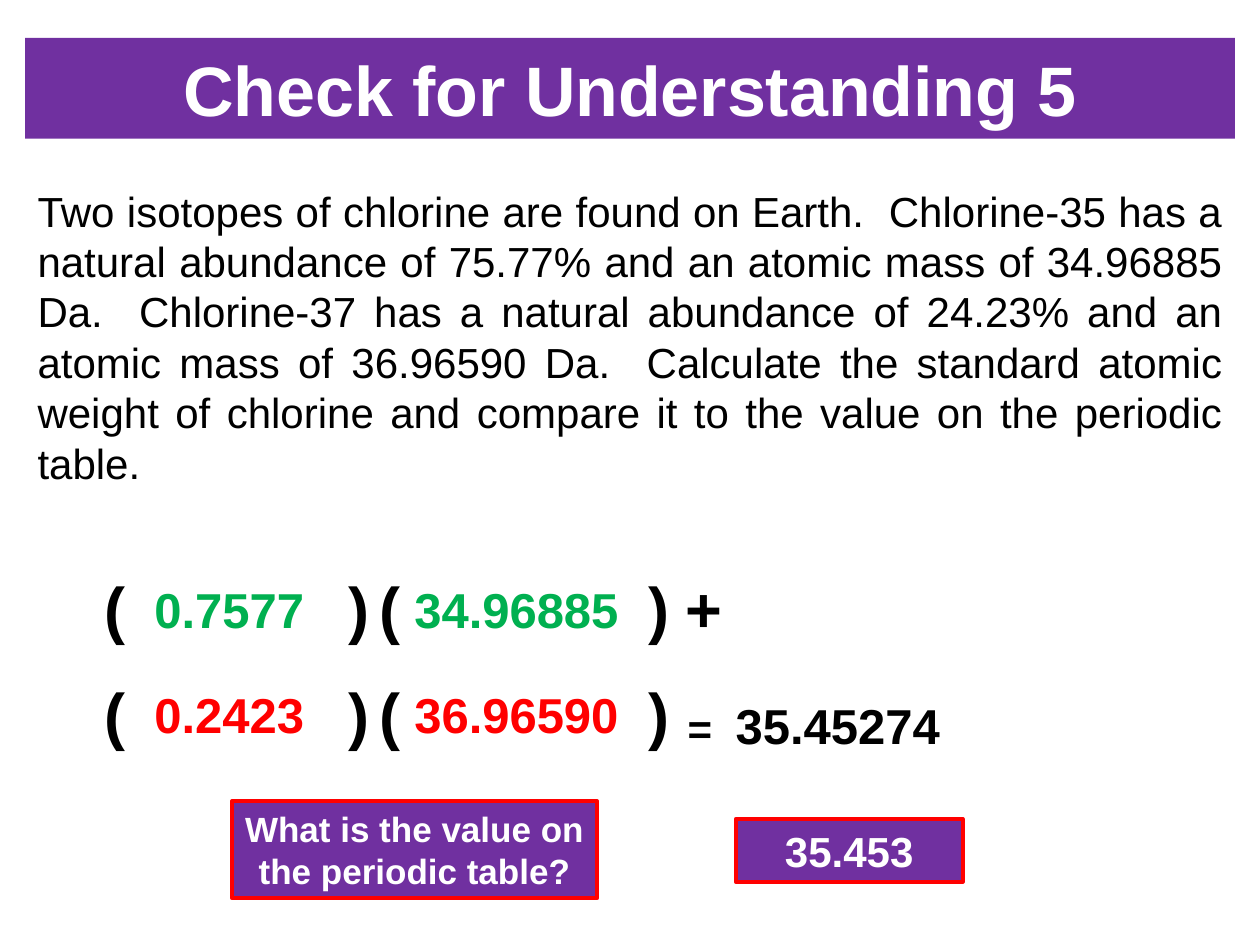
"""Build a slide that checks the standard atomic weight of chlorine."""
from pptx import Presentation
from pptx.dml.color import RGBColor
from pptx.enum.shapes import MSO_SHAPE
from pptx.enum.text import MSO_ANCHOR, PP_ALIGN
from pptx.oxml.ns import qn
from pptx.util import Inches, Pt

PURPLE = RGBColor(0x70, 0x30, 0xA0)
RED = RGBColor(0xFF, 0x00, 0x00)
GREEN = RGBColor(0x00, 0xB0, 0x50)
BLACK = RGBColor(0x00, 0x00, 0x00)
WHITE = RGBColor(0xFF, 0xFF, 0xFF)
NO_STYLE_NO_GRID = "{2D5ABB26-0587-4C30-8999-92F81FD0307C}"

prs = Presentation()
prs.slide_width, prs.slide_height = Inches(10), Inches(7.5)
U = prs.slide_width // 100
s = prs.slides.add_slide(prs.slide_layouts[5])


def grid(*units):
    return [int(n * U) for n in units]


def style(p, size, color, align=PP_ALIGN.CENTER, bold=True):
    p.alignment = align
    p.font.name = "Arial"
    p.font.size = Pt(size)
    p.font.bold = bold
    p.font.color.rgb = color


sp = s.shapes.title
sp.left, sp.top, sp.width, sp.height = grid(2, 3, 96, 8)
sp.fill.solid()
sp.fill.fore_color.rgb = PURPLE
tf = sp.text_frame
tf.text = "Check for Understanding 5"
tf.vertical_anchor = MSO_ANCHOR.MIDDLE
style(tf.paragraphs[0], 40, WHITE)

tf = s.shapes.add_textbox(*grid(2, 14.2, 96, 25.4)).text_frame
tf.word_wrap = True
p = tf.paragraphs[0]
p.text = (
    "Two isotopes of chlorine are found on Earth.  Chlorine-35 has a natural "
    "abundance of 75.77% and an atomic mass of 34.96885 Da.  Chlorine-37 has a "
    "natural abundance of 24.23% and an atomic mass of 36.96590 Da.  Calculate "
    "the standard atomic weight of chlorine and compare it to the value on the "
    "periodic table."
)
p.line_spacing = Pt(28.8)
style(p, 24, BLACK, PP_ALIGN.JUSTIFY, bold=False)

COLS = [2.3, 17, 2.3, 2.3, 19, 2.3, 6]
ALIGN = {"(": PP_ALIGN.RIGHT, ")": PP_ALIGN.LEFT}
terms = [
    (45, GREEN, ["(", "0.7577", ")", "(", "34.96885", ")", "+"]),
    (53.4, RED, ["(", "0.2423", ")", "(", "36.96590", ")"]),
]
for top, color, texts in terms:
    widths = COLS[:len(texts)]
    box = grid(7.3, top, sum(widths), 4.1)
    frame = s.shapes.add_table(1, len(texts), *box)
    for style_id in frame.element.iter(qn("a:tableStyleId")):
        style_id.text = NO_STYLE_NO_GRID
    table = frame.table
    table.first_row = table.horz_banding = False
    for i, (text, width) in enumerate(zip(texts, widths)):
        table.columns[i].width = int(width * U)
        cell = table.cell(0, i)
        cell.fill.background()
        cell.vertical_anchor = MSO_ANCHOR.MIDDLE
        cell.text = text
        size, ink = (28, color) if len(text) > 1 else (36, BLACK)
        style(cell.text_frame.paragraphs[0], size, ink,
              ALIGN.get(text, PP_ALIGN.CENTER))

sp = s.shapes.add_textbox(*grid(53.6, 54.7, 42.8, 5.7))
sp.fill.solid()
sp.fill.fore_color.rgb = WHITE
tf = sp.text_frame
tf.word_wrap = True
p = tf.paragraphs[0]
style(p, 24, BLACK, PP_ALIGN.LEFT)
for text, size in [("=  ", 24), ("35.45274", 28)]:
    r = p.add_run()
    r.text = text
    r.font.size = Pt(size)

for box, text, size, anchor in [
    ((18.4, 63.6, 29, 7.7), "What is the value on the periodic table?", 20,
     MSO_ANCHOR.TOP),
    ((58.4, 65, 18, 5), "35.453", 24, MSO_ANCHOR.MIDDLE),
]:
    sp = s.shapes.add_shape(MSO_SHAPE.RECTANGLE, *grid(*box))
    sp.shadow.inherit = False
    sp.fill.solid()
    sp.fill.fore_color.rgb = PURPLE
    sp.line.color.rgb = RED
    sp.line.width = Pt(2.25)
    tf = sp.text_frame
    tf.word_wrap = True
    tf.vertical_anchor = anchor
    tf.text = text
    style(tf.paragraphs[0], size, WHITE)

prs.save("out.pptx")
